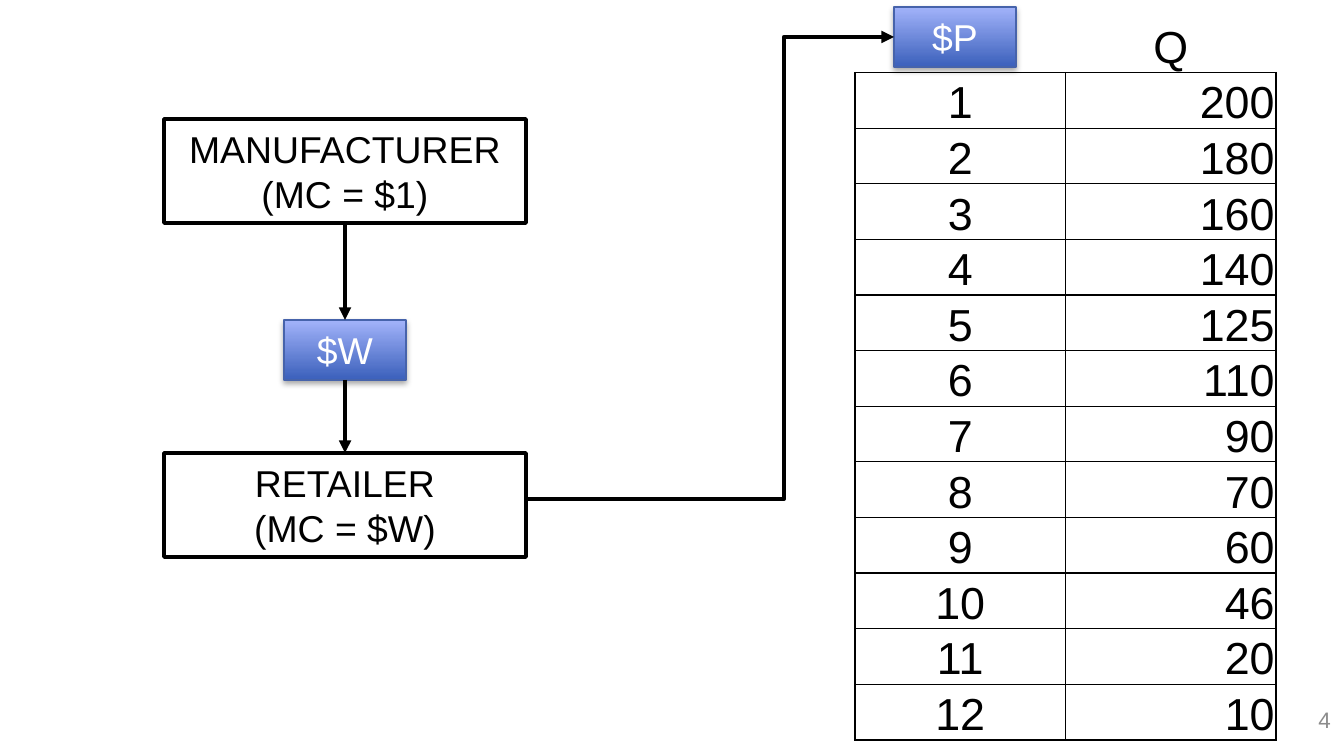
"""Build a slide showing the manufacturer, retailer and demand schedule."""
from lxml import etree
from pptx import Presentation
from pptx.dml.color import RGBColor
from pptx.enum.shapes import MSO_CONNECTOR, MSO_SHAPE
from pptx.enum.text import MSO_ANCHOR, PP_ALIGN
from pptx.oxml import parse_xml
from pptx.oxml.ns import nsdecls, qn
from pptx.util import Pt

RECTANGLE = MSO_SHAPE.RECTANGLE
STRAIGHT, ELBOW = MSO_CONNECTOR.STRAIGHT, MSO_CONNECTOR.ELBOW
MIDDLE, BOTTOM = MSO_ANCHOR.MIDDLE, MSO_ANCHOR.BOTTOM
CENTER, RIGHT = PP_ALIGN.CENTER, PP_ALIGN.RIGHT
SCALE = 9144000 / 1344
TOP_SIDE, LEFT_SIDE, BOTTOM_SIDE = 0, 1, 2
QUANTITIES = [200, 180, 160, 140, 125, 110, 90, 70, 60, 46, 20, 10]


def px(*lengths):
    return [round(length * SCALE) for length in lengths]


def write(frame, text, size, color, align, anchor):
    frame.text = text
    frame.word_wrap = True
    frame.vertical_anchor = anchor
    for para in frame.paragraphs:
        para.alignment = align
        para.font.name = "Arial"
        para.font.size = Pt(size)
        para.font.color.rgb = RGBColor.from_string(color)


deck = Presentation()
deck.slide_width, deck.slide_height = px(1344, 756)
page = deck.slides.add_slide(deck.slide_layouts[6])

page_number = page.shapes.add_textbox(*px(1042, 700, 302, 40))
write(page_number.text_frame, "4", 12, "8C8C8C", RIGHT, MIDDLE)

firms = []
for top, text in [(119, "MANUFACTURER\n(MC = $1)"), (453, "RETAILER\n(MC = $W)")]:
    box = page.shapes.add_shape(RECTANGLE, *px(164, top, 362, 104))
    box.shadow.inherit = False
    box.fill.solid()
    box.fill.fore_color.rgb = RGBColor.from_string("FFFFFF")
    box.line.color.rgb = RGBColor.from_string("000000")
    box.line.width = Pt(2)
    write(box.text_frame, text, 20, "000000", CENTER, MIDDLE)
    firms.append(box)
manufacturer, retailer = firms

prices = []
for left, top, text in [(284, 320, "$W"), (894, 7, "$P")]:
    box = page.shapes.add_shape(RECTANGLE, *px(left, top, 122, 60))
    box.fill.gradient()
    box.fill.gradient_angle = 90
    for stop, color in zip(box.fill.gradient_stops, ["3B60BB", "A2B3FA"]):
        stop.color.rgb = RGBColor.from_string(color)
    box.line.color.rgb = RGBColor.from_string("4663AB")
    box.line.width = Pt(0.75)
    box.shadow.inherit = False
    box.element.spPr.find(qn("a:effectLst")).append(parse_xml(
        f'<a:outerShdw {nsdecls("a")} blurRad="40000" dist="23000" dir="5400000" rotWithShape="0">'
        '<a:srgbClr val="000000"><a:alpha val="35000"/></a:srgbClr></a:outerShdw>'))
    write(box.text_frame, text, 20, "FFFFFF", CENTER, MIDDLE)
    prices.append(box)
wholesale, retail = prices

table = page.shapes.add_table(13, 2, *px(855, 17, 421, 723)).table
table.first_row = table.horz_banding = False
rows = [("", "Q")] + [(str(price), str(sold)) for price, sold in enumerate(QUANTITIES, 1)]
for row, texts in enumerate(rows):
    for column, text in enumerate(texts):
        cell = table.cell(row, column)
        cell.margin_left = cell.margin_right = cell.margin_top = Pt(0.75)
        cell.margin_bottom = 0
        align = RIGHT if row and column else CENTER
        write(cell.text_frame, text, 24, "000000", align, None)
        cell.vertical_anchor = BOTTOM
        for side in "LRTB":
            width = 1 if (row, side) in [(0, "B"), (1, "T")] else 0.75
            visible = row or side == "B"
            paint = '<a:solidFill><a:srgbClr val="000000"/></a:solidFill>' if visible else "<a:noFill/>"
            cell._tc.get_or_add_tcPr().append(parse_xml(
                f'<a:ln{side} {nsdecls("a")} w="{Pt(width)}">{paint}</a:ln{side}>'))
        cell.fill.background()

down_to_wholesale = page.shapes.add_connector(STRAIGHT, *px(345, 223, 345, 320))
down_to_wholesale.begin_connect(manufacturer, BOTTOM_SIDE)
down_to_wholesale.end_connect(wholesale, TOP_SIDE)
down_to_retailer = page.shapes.add_connector(STRAIGHT, *px(345, 380, 345, 453))
down_to_retailer.begin_connect(wholesale, BOTTOM_SIDE)
down_to_retailer.end_connect(retailer, TOP_SIDE)
across_to_retail = page.shapes.add_connector(ELBOW, *px(526, 499, 894, 37))
across_to_retail.end_connect(retail, LEFT_SIDE)
bend = across_to_retail.element.spPr.find(qn("a:prstGeom")).find(qn("a:avLst"))
etree.SubElement(bend, qn("a:gd"), name="adj1", fmla="val 70100")

for arrow in [down_to_wholesale, down_to_retailer, across_to_retail]:
    arrow.line.color.rgb = RGBColor.from_string("000000")
    arrow.line.width = Pt(2.25)
    outline = arrow.element.spPr.find(qn("a:ln"))
    etree.SubElement(outline, qn("a:tailEnd"), type="triangle")
    etree.SubElement(arrow.element.spPr, qn("a:effectLst"))

deck.save("out.pptx")
